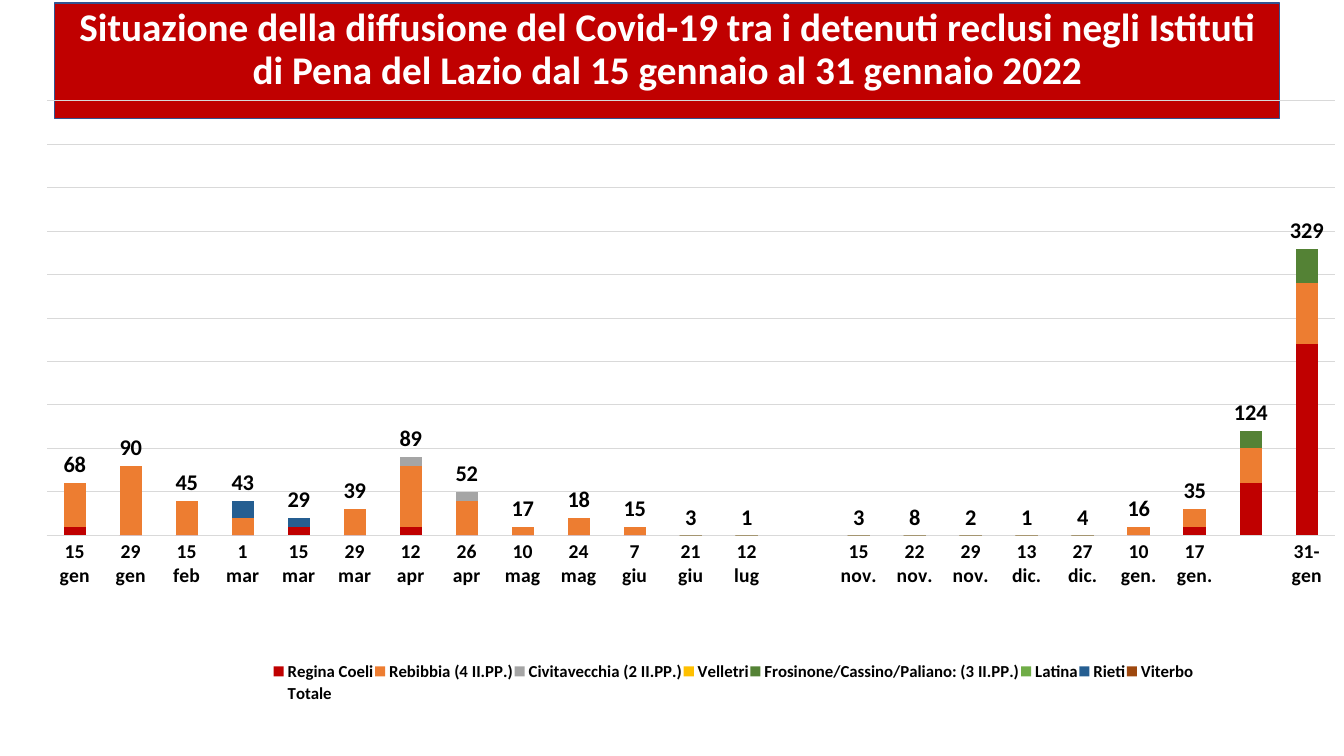
from dataclasses import dataclass

import pptx
import pptx.chart.data
import pptx.dml.color
import pptx.enum.chart
import pptx.enum.shapes
import pptx.enum.text
import pptx.oxml
import pptx.oxml.ns
import pptx.util
from pptx.util import Pt


@dataclass(frozen=True)
class Theme:
    font: str = "Calibri"
    banner: str = "C00000"
    banner_line: str = "325491"
    white: str = "FFFFFF"
    black: str = "000000"
    grid: str = "D9D9D9"
    title_size: int = 28
    total_size: int = 16
    axis_size: int = 14
    legend_size: int = 12


THEME = Theme()

TITLE = ("Situazione della diffusione del Covid-19 tra i detenuti reclusi negli "
         "Istituti di Pena del Lazio dal 15 gennaio al 31 gennaio 2022")

DATES = ["15\ngen", "29\ngen", "15\nfeb", "1\nmar", "15\nmar", "29\nmar", "12\napr", "26\napr",
         "10\nmag", "24\nmag", "7\ngiu", "21\ngiu", "12\nlug", "", "15 nov.", "22 nov.",
         "29 nov.", "13 dic.", "27 dic.", "10 gen.", "17 gen.", "", "31-gen"]

# Summer break without data between the two waves
NO_CASES = [0] * 13 + [None] + [0] * 9

# Cases per prison, rounded to tens
PRISONS = [
    ("Regina Coeli", "C00000",
     [10, 0, 0, 0, 10, 0, 10, 0, 0, 0, 0, 0, 0, None, 0, 0, 0, 0, 0, 0, 10, 60, 220]),
    ("Rebibbia (4 II.PP.)", "ED7D31",
     [50, 80, 40, 20, 0, 30, 70, 40, 10, 20, 10, 0, 0, None, 0, 0, 0, 0, 0, 10, 20, 40, 70]),
    ("Civitavecchia (2 II.PP.)", "A5A5A5",
     [0, 0, 0, 0, 0, 0, 10, 10, 0, 0, 0, 0, 0, None, 0, 0, 0, None, 0, 0, 0, 0, 0]),
    ("Velletri", "FFC000", NO_CASES),
    ("Frosinone/Cassino/Paliano: (3 II.PP.)", "548235", NO_CASES[:-2] + [20, 40]),
    ("Latina", "70AD47", NO_CASES),
    ("Rieti", "255E91", [0, 0, 0, 20, 10] + NO_CASES[5:]),
    ("Viterbo", "9E480E", NO_CASES),
]
TOTALS = [68, 90, 45, 43, 29, 39, 89, 52, 17, 18, 15, 3, 1, None,
          3, 8, 2, 1, 4, 16, 35, 124, 329]


def rgb(value):
    return pptx.dml.color.RGBColor.from_string(value)


def style_font(font, size, color, bold=True):
    font.name = THEME.font
    font.size = Pt(size)
    font.bold = bold
    font.color.rgb = rgb(color)


def style_line(line, color, width):
    line.color.rgb = rgb(color)
    line.width = Pt(width)


def manual_layout(left, top, width, height, inner=False):
    """Return a c:layout element with sizes as fractions of the chart."""
    target = '<c:layoutTarget val="inner"/>' if inner else ""
    return pptx.oxml.parse_xml(
        f'<c:layout {pptx.oxml.ns.nsdecls("c")}><c:manualLayout>{target}'
        '<c:xMode val="edge"/><c:yMode val="edge"/>'
        f'<c:x val="{left}"/><c:y val="{top}"/><c:w val="{width}"/><c:h val="{height}"/>'
        '</c:manualLayout></c:layout>')


def set_layout(parent, layout, position):
    for old in parent.findall(pptx.oxml.ns.qn("c:layout")):
        parent.remove(old)
    parent.insert(position, layout)


def add_banner(slide):
    banner = slide.shapes.add_shape(
        pptx.enum.shapes.MSO_SHAPE.RECTANGLE, Pt(39), Pt(2), Pt(875), Pt(82.8))
    banner.shadow.inherit = False
    banner.fill.solid()
    banner.fill.fore_color.rgb = rgb(THEME.banner)
    style_line(banner.line, THEME.banner_line, 1)
    frame = banner.text_frame
    frame.word_wrap = True
    frame.vertical_anchor = pptx.enum.text.MSO_ANCHOR.TOP
    paragraph = frame.paragraphs[0]
    paragraph.alignment = pptx.enum.text.PP_ALIGN.CENTER
    paragraph.line_spacing = 0.9
    paragraph.space_before = Pt(10)
    run = paragraph.add_run()
    run.text = TITLE
    style_font(run.font, THEME.title_size, THEME.white)


def style_axes(chart):
    dates = chart.category_axis
    dates.major_tick_mark = pptx.enum.chart.XL_TICK_MARK.NONE
    style_font(dates.tick_labels.font, THEME.axis_size, THEME.black)
    style_line(dates.format.line, THEME.grid, 0.75)
    cases = chart.value_axis
    cases.minimum_scale, cases.maximum_scale = 0, 500
    cases.major_unit = 50
    cases.visible = False
    cases.has_major_gridlines = True
    style_line(cases.major_gridlines.format.line, THEME.grid, 0.75)


def style_series(plot):
    plot.gap_width = 150
    plot.overlap = 100
    plot.vary_by_categories = False
    *prisons, total = plot.series
    for series, (_, color, _) in zip(prisons, PRISONS):
        series.format.fill.solid()
        series.format.fill.fore_color.rgb = rgb(color)
    total.format.fill.background()
    total.format.line.fill.background()
    labels = total.data_labels
    labels.show_value = True
    labels.position = pptx.enum.chart.XL_LABEL_POSITION.INSIDE_BASE
    style_font(labels.font, THEME.total_size, THEME.black)


def add_cases_chart(slide):
    """Stacked cases per prison, with an unfilled series carrying the totals."""
    data = pptx.chart.data.CategoryChartData()
    data.categories = DATES
    for name, _, cases in PRISONS:
        data.add_series(name, cases)
    data.add_series("Totale", TOTALS)
    chart = slide.shapes.add_chart(
        pptx.enum.chart.XL_CHART_TYPE.COLUMN_STACKED,
        Pt(18.3), Pt(63), Pt(941.7), Pt(450.5), data).chart
    chart.has_title = False
    style_font(chart.font, 10, THEME.black, bold=False)
    style_axes(chart)
    style_series(chart.plots[0])
    chart.has_legend = True
    legend = chart.legend
    legend.position = pptx.enum.chart.XL_LEGEND_POSITION.BOTTOM
    legend.include_in_layout = False
    style_font(legend.font, THEME.legend_size, THEME.black)
    plot_area = chart.plots[0]._element.getparent()
    set_layout(plot_area, manual_layout(0.016, 0.02, 0.977, 0.689, inner=True), 0)
    set_layout(legend._element, manual_layout(0.187, 0.905, 0.7, 0.075), 1)


def main():
    deck = pptx.Presentation()
    deck.slide_width, deck.slide_height = Pt(960), Pt(540)
    slide = deck.slides.add_slide(deck.slide_layouts[6])
    add_banner(slide)
    add_cases_chart(slide)
    deck.save("out.pptx")


if __name__ == "__main__":
    main()
